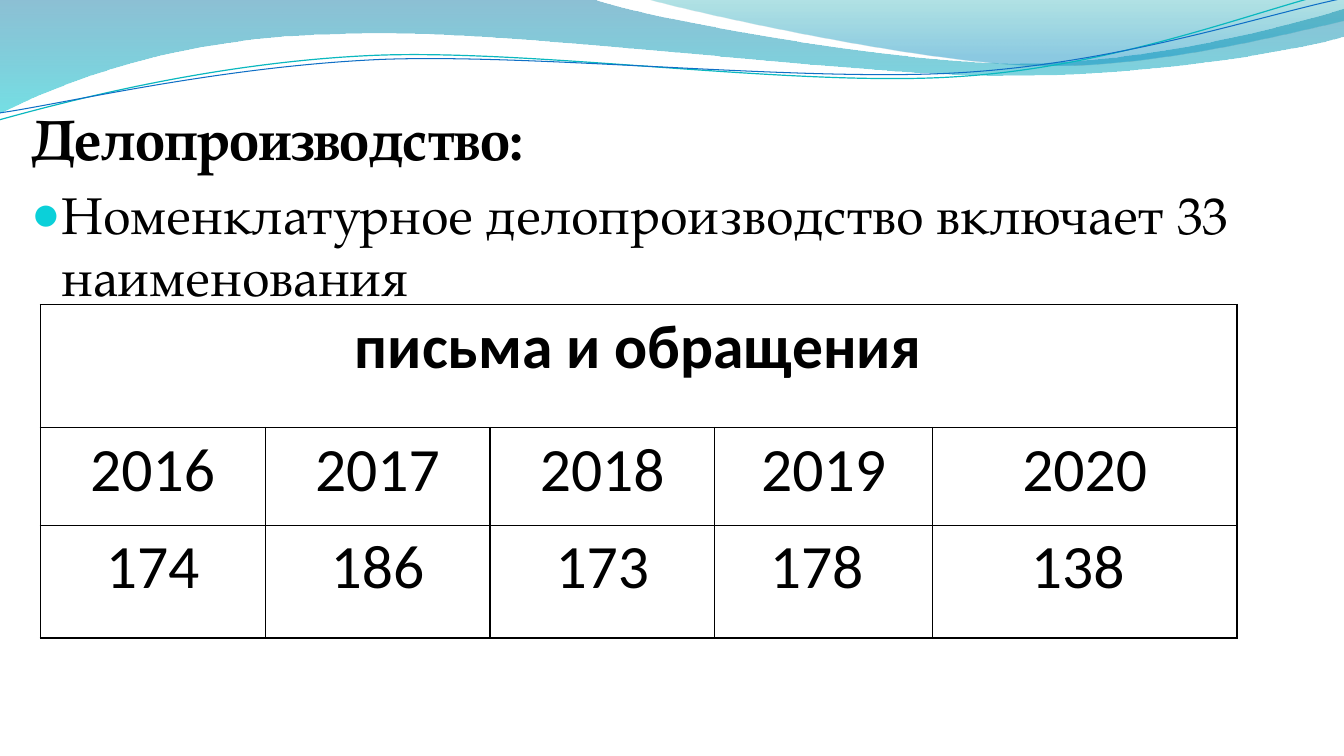
from lxml import etree
from pptx import Presentation
from pptx import util as u
from pptx.dml.color import RGBColor
from pptx.enum import text
from pptx.oxml.ns import qn

HEADING = "Делопроизводство:"
BULLET = "Номенклатурное делопроизводство включает 33 наименования"
TABLE_TITLE = "письма и обращения"
LETTERS = {"2016": "174", "2017": "186", "2018": "173", "2019": "178 ", "2020": "138 "}
COLUMNS = [2.23, 2.23, 2.23, 2.16, 3.02]
ROWS = [1.22, 0.97, 1.12]
SERIF, SANS, BLACK = "TeX Gyre Pagella", "Calibri", "000000"
UNITS = 1000

BANDS = [
    ([(0, 0), (5.87, -0.01), (6.34, 0.17, 8.85, 0.63, 10.11, 0.63),
      (11.38, 0.63, 12.78, 0.26, 13.33, 0.09), (13.35, 0.36),
      (13.11, 0.44, 11.6, 0.76, 9.94, 0.75), (8.29, 0.75, 5.09, 0.28, 3.43, 0.34),
      (1.72, 0.36, 0.61, 0.83, -0.01, 1.13)],
     [(0, "0074A1", 45), (1, "00C6CF", 55)]),
    ([(6.39, -0.01), (6.79, 0.11, 9.09, 0.62, 10.25, 0.65),
      (11.41, 0.69, 12.82, 0.32, 13.33, 0.21), (13.33, 0)],
     [(0, "00A1A9", 30), (0.8, "008BBF", 45)]),
]
STRANDS = [
    ([(-0.01, 1.19), (0.64, 1.01, 2.11, 0.62, 3.69, 0.55),
      (5.27, 0.48, 7.9, 0.87, 9.5, 0.76), (11.1, 0.66, 12.52, 0.08, 13.31, -0.1)],
     "0AB8BF", 0.85),
    ([(0, 1.12), (0.63, 1.03, 2.18, 0.66, 3.78, 0.59),
      (5.37, 0.53, 7.96, 0.82, 9.55, 0.72), (11.15, 0.62, 12.55, 0.14, 13.34, -0.02)],
     "0F6FC6", 0.75),
]


def color(value):
    """Turn a hex string into a colour."""
    return RGBColor.from_string(value)


def add_element(parent, tag, **attributes):
    """Append a drawing element with attributes."""
    element = etree.SubElement(parent, qn(f"a:{tag}"))
    for name, value in attributes.items():
        element.set(name, str(value))
    return element


def add_wave(slide, curve, close):
    """Draw a freeform whose six-number parts are Bezier arcs."""
    points = [(round(part[i] * UNITS), round(part[i + 1] * UNITS))
              for part in curve for i in range(0, len(part), 2)]
    builder = slide.shapes.build_freeform(*points[0], scale=u.Inches(1) / UNITS)
    builder.add_line_segments(points[1:], close=close)
    wave = builder.convert_to_shape()
    wave.shadow.inherit = False
    segments = iter(list(wave.element.iter(qn("a:lnTo"))))
    for part in curve[1:]:
        segment = next(segments)
        if len(part) == 6:
            arc = etree.Element(qn("a:cubicBezTo"))
            segment.addprevious(arc)
            for control in (segment, next(segments), next(segments)):
                arc.append(control[0])
                control.getparent().remove(control)
    return wave


def add_band(slide, curve, stops):
    """Draw a closed wave with a translucent vertical gradient."""
    band = add_wave(slide, curve, True)
    band.line.fill.background()
    band.fill.gradient()
    band.fill.gradient_angle = 270
    for stop, (position, value, opacity) in zip(band.fill.gradient_stops, stops):
        stop.position = position
        stop.color.rgb = color(value)
    colors = list(band.element.spPr.iter(qn("a:srgbClr")))
    for element, (position, value, opacity) in zip(colors, stops):
        add_element(element, "alpha", val=opacity * 1000)


def add_strand(slide, curve, value, width):
    """Draw an open wave line."""
    strand = add_wave(slide, curve, False)
    strand.fill.background()
    strand.line.color.rgb = color(value)
    strand.line.width = u.Pt(width)


def set_font(paragraph, name, size, bold):
    """Format a whole paragraph in black."""
    paragraph.font.name = name
    paragraph.font.size = u.Pt(size)
    paragraph.font.bold = bold
    paragraph.font.color.rgb = color(BLACK)


def set_indent(paragraph, indent):
    """Give a paragraph a hanging indent and return its properties."""
    properties = paragraph._p.get_or_add_pPr()
    properties.set("marL", str(u.Inches(indent)))
    properties.set("indent", str(-u.Inches(indent)))
    return properties


def fill_body(body):
    """Place the heading and the bullet line."""
    body.left, body.top, body.width, body.height = map(u.Inches, (0.21, 0.98, 12.37, 2.06))
    frame = body.text_frame
    frame.text = f"{HEADING}\n{BULLET}"
    frame.auto_size = text.MSO_AUTO_SIZE.NONE
    heading, item = frame.paragraphs
    add_element(set_indent(heading, 0), "buNone")
    properties = set_indent(item, 0.3)
    add_element(add_element(properties, "buClr"), "srgbClr", val="0BD0D9")
    add_element(properties, "buSzPct", val=95000)
    add_element(properties, "buChar", char="●")
    for paragraph, size, bold in ((heading, 40.7, True), (item, 37, False)):
        paragraph.space_before = u.Pt(7.4)
        set_font(paragraph, SERIF, size, bold)


def add_borders(cell):
    """Draw thin black lines around a cell."""
    properties = cell._tc.get_or_add_tcPr()
    for index, side in enumerate(("lnL", "lnR", "lnT", "lnB")):
        border = add_element(properties, side, w=u.Pt(1))
        add_element(add_element(border, "solidFill"), "srgbClr", val=BLACK)
        properties.insert(index, border)


def add_letters_table(slide):
    """Build the table of letters by year."""
    rows = [[TABLE_TITLE], list(LETTERS), list(LETTERS.values())]
    table = slide.shapes.add_table(
        len(ROWS), len(COLUMNS), u.Inches(0.4), u.Inches(3.02),
        u.Inches(sum(COLUMNS)), u.Inches(sum(ROWS))).table
    table.horz_banding = table.first_row = False
    table.cell(0, 0).merge(table.cell(0, len(COLUMNS) - 1))
    for column, width in zip(table.columns, COLUMNS):
        column.width = u.Inches(width)
    for row, height, values in zip(table.rows, ROWS, rows):
        row.height = u.Inches(height)
        for cell in row.cells:
            cell.fill.background()
            add_borders(cell)
        for cell, value in zip(row.cells, values):
            cell.text = value
            paragraph = cell.text_frame.paragraphs[0]
            paragraph.alignment = text.PP_ALIGN.CENTER
            set_indent(paragraph, 0.38)
            set_font(paragraph, SANS, 44, values is rows[0])


def main():
    """Build and save the slide."""
    presentation = Presentation()
    presentation.slide_width, presentation.slide_height = u.Inches(13.33), u.Inches(7.5)
    slide = presentation.slides.add_slide(presentation.slide_layouts[1])
    title, body = slide.placeholders
    title.element.getparent().remove(title.element)
    for curve, stops in BANDS:
        add_band(slide, curve, stops)
    for curve, value, width in STRANDS:
        add_strand(slide, curve, value, width)
    fill_body(body)
    body.element.getparent().append(body.element)
    add_letters_table(slide)
    presentation.save("out.pptx")


if __name__ == "__main__":
    main()
